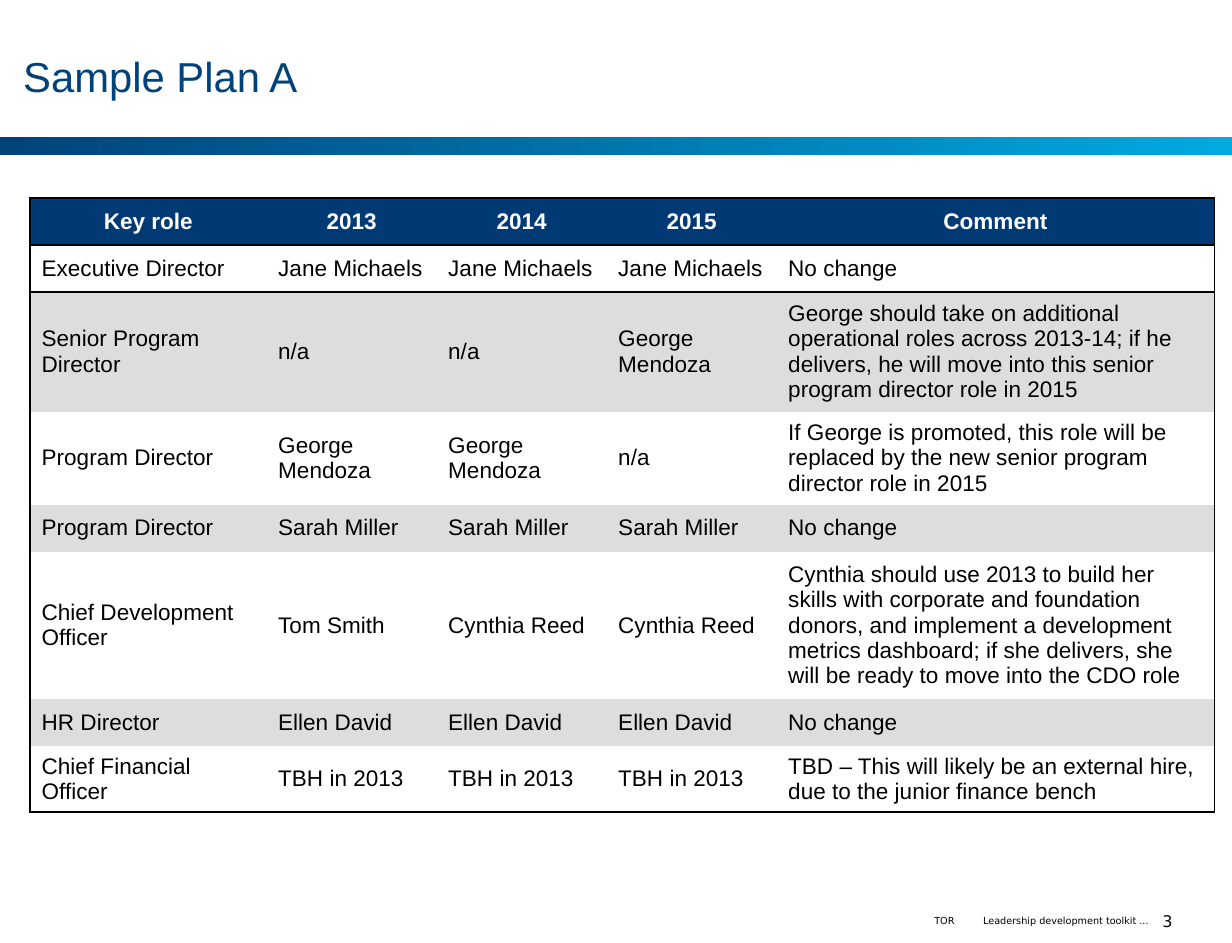
"""Build the "Sample Plan A" succession planning slide."""
from dataclasses import dataclass

from lxml.etree import SubElement
from pptx import Presentation
from pptx.dml.color import RGBColor
from pptx.enum.shapes import MSO_SHAPE as Shape
from pptx.enum.text import MSO_ANCHOR as Anchor, PP_ALIGN as Align
from pptx.oxml.ns import qn
from pptx.util import Cm, Pt

NAVY, HEADER_BLUE, SKY = "00437A", "003974", "00A9E0"
BLACK, WHITE, BAND_GREY = "000000", "FFFFFF", "DDDDDD"


@dataclass(frozen=True)
class Box:
    left: float
    top: float
    width: float
    height: float

    def lengths(self) -> tuple:
        return Cm(self.left), Cm(self.top), Cm(self.width), Cm(self.height)


@dataclass(frozen=True)
class FooterItem:
    text: str
    box: Box
    size: float
    align: Align
    color: str = BLACK
    inset: float = 0.13


@dataclass(frozen=True)
class RoleRow:
    height: float
    role: str
    holders: tuple[str, str, str]
    comment: str

    def texts(self) -> tuple[str, ...]:
        return self.role, *self.holders, self.comment


FOOTER = [
    FooterItem("3", Box(25.17, 20.07, 0.89, 0.25), 10, Align.CENTER, "080808", 0),
    FooterItem("Leadership development toolkit ...", Box(21.39, 20.07, 3.81, 0.25), 6, Align.RIGHT),
    FooterItem("TOR", Box(20.37, 20.07, 0.58, 0.25), 6, Align.LEFT),
]

TABLE_LEFT, TABLE_TOP = 0.66, 4.34
COLUMN_WIDTHS = [5.19, 3.73, 3.73, 3.73, 9.6]
ROWS = [
    RoleRow(1.03, "Key role", ("2013", "2014", "2015"), "Comment"),
    RoleRow(1.03, "Executive Director", ("Jane Michaels",) * 3, "No change"),
    RoleRow(2.62, "Senior Program Director", ("n/a", "n/a", "George Mendoza"),
            "George should take on additional operational roles across 2013-14; if he delivers, "
            "he will move into this senior program director role in 2015"),
    RoleRow(2.04, "Program Director", ("George Mendoza", "George Mendoza", "n/a"),
            "If George is promoted, this role will be replaced by the new senior program "
            "director role in 2015"),
    RoleRow(1.03, "Program Director", ("Sarah Miller",) * 3, "No change"),
    RoleRow(3.23, "Chief Development Officer", ("Tom Smith", "Cynthia Reed", "Cynthia Reed"),
            "Cynthia should use 2013 to build her skills with corporate and foundation donors, "
            "and implement a development metrics dashboard; if she delivers, she will be ready "
            "to move into the CDO role"),
    RoleRow(1.03, "HR Director", ("Ellen David",) * 3, "No change"),
    RoleRow(1.45, "Chief Financial Officer", ("TBH in 2013",) * 3,
            "TBD – This will likely be an external hire, due to the junior finance bench"),
]


def rgb(color: str) -> RGBColor:
    return RGBColor.from_string(color)


def write_text(text_frame, text: str, *, size: float, color: str = BLACK, font: str = "Arial",
               bold: bool = False, align: Align = Align.LEFT) -> None:
    paragraph = text_frame.paragraphs[0]
    paragraph.alignment = align
    run = paragraph.add_run()
    run.text = text
    run.font.name, run.font.size, run.font.bold = font, Pt(size), bold
    run.font.color.rgb = rgb(color)


def set_insets(text_frame, left: float = 0, right: float = 0) -> None:
    text_frame.margin_left, text_frame.margin_right = Cm(left), Cm(right)
    text_frame.margin_top = text_frame.margin_bottom = 0
    text_frame.vertical_anchor = Anchor.MIDDLE


def add_title(slide, text: str) -> None:
    title = slide.shapes.title
    title.left, title.top, title.width, title.height = Box(0.51, 0.41, 26.09, 2.51).lengths()
    set_insets(title.text_frame, right=0.2)
    write_text(title.text_frame, text, size=26, color=NAVY)


def add_gradient_bar(slide) -> None:
    bar = slide.shapes.add_shape(Shape.RECTANGLE, *Box(0, 3, 27.03, 0.41).lengths())
    bar.shadow.inherit = False
    bar.line.fill.background()
    bar.fill.gradient()
    bar.fill.gradient_angle = 0
    for stop, color in zip(bar.fill.gradient_stops, (NAVY, SKY)):
        stop.color.rgb = rgb(color)


def add_footer_item(slide, item: FooterItem) -> None:
    text_frame = slide.shapes.add_textbox(*item.box.lengths()).text_frame
    text_frame.word_wrap = False
    set_insets(text_frame, left=item.inset)
    write_text(text_frame, item.text, size=item.size, color=item.color,
               font="DejaVu Sans", align=item.align)


def set_borders(cell, drawn: dict[str, bool]) -> None:
    properties = cell._tc.get_or_add_tcPr()
    for side, visible in drawn.items():
        line = SubElement(properties, qn(f"a:ln{side}"), w=str(Pt(1)))
        if visible:
            SubElement(SubElement(line, qn("a:solidFill")), qn("a:srgbClr"), val=BLACK)
        else:
            SubElement(line, qn("a:noFill"))


def fill_cell(cell, text: str, row: int, column: int) -> None:
    is_header = row == 0
    set_borders(cell, {
        "L": column == 0,
        "R": column == len(COLUMN_WIDTHS) - 1,
        "T": row <= 2,
        "B": row <= 1 or row == len(ROWS) - 1,
    })
    if is_header or row % 2 == 0:
        cell.fill.solid()
        cell.fill.fore_color.rgb = rgb(HEADER_BLUE if is_header else BAND_GREY)
    else:
        cell.fill.background()
    cell.vertical_anchor = Anchor.MIDDLE
    write_text(cell.text_frame, text, size=14, color=WHITE if is_header else BLACK,
               bold=is_header, align=Align.CENTER if is_header else Align.LEFT)


def add_plan_table(slide) -> None:
    box = Box(TABLE_LEFT, TABLE_TOP, sum(COLUMN_WIDTHS), sum(row.height for row in ROWS))
    table = slide.shapes.add_table(len(ROWS), len(COLUMN_WIDTHS), *box.lengths()).table
    table.horz_banding = False
    for column, width in zip(table.columns, COLUMN_WIDTHS):
        column.width = Cm(width)
    for row_index, role_row in enumerate(ROWS):
        table.rows[row_index].height = Cm(role_row.height)
        for column_index, text in enumerate(role_row.texts()):
            fill_cell(table.cell(row_index, column_index), text, row_index, column_index)


def main() -> None:
    presentation = Presentation()
    presentation.slide_width, presentation.slide_height = Cm(27.03), Cm(20.68)
    slide = presentation.slides.add_slide(presentation.slide_layouts[5])
    add_gradient_bar(slide)
    for item in FOOTER:
        add_footer_item(slide, item)
    add_title(slide, "Sample Plan A")
    add_plan_table(slide)
    presentation.save("out.pptx")


if __name__ == "__main__":
    main()
